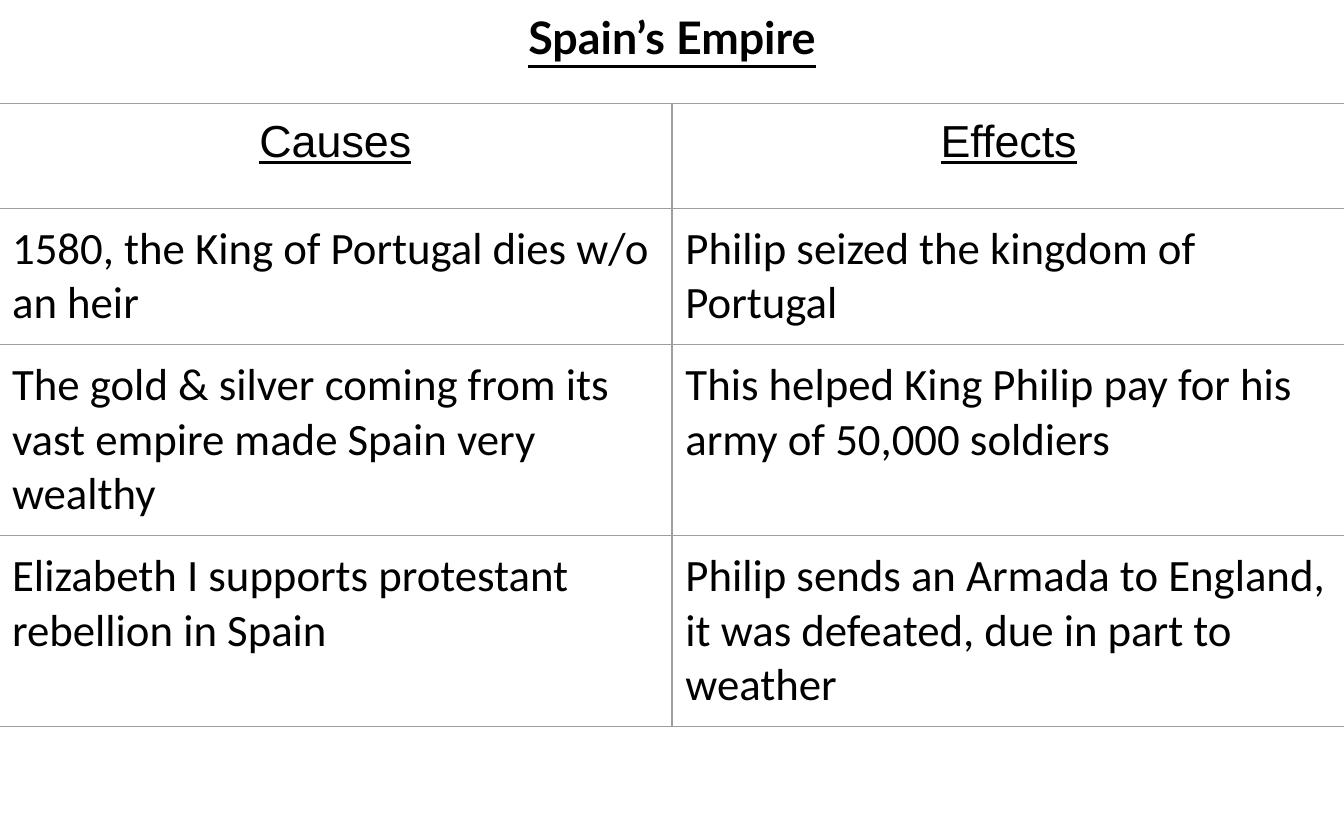
from dataclasses import dataclass

from lxml.etree import SubElement
from pptx import Presentation
from pptx.dml.color import RGBColor as RGB
from pptx.enum.text import MSO_ANCHOR as Anchor, PP_ALIGN as Align
from pptx.oxml.ns import qn
from pptx.util import Inches, Pt


@dataclass(frozen=True)
class Theme:
    ink: str = "000000"
    rule: str = "9E9E9E"
    size: int = 24
    title: str = "Lato"
    head: str = "Arial"
    body: str = "Calibri"
    gap: int = 6
    line: float = 0.75


THEME = Theme()
ROWS = [
    ("Causes", "Effects"),
    ("1580, the King of Portugal dies w/o an heir",
     "Philip seized the kingdom of Portugal"),
    ("The gold & silver coming from its vast empire made Spain very wealthy",
     "This helped King Philip pay for his army of 50,000 soldiers"),
    ("Elizabeth I supports protestant rebellion in Spain",
     "Philip sends an Armada to England, it was defeated, due in part to weather"),
]
HEIGHTS = [0.78, 0.92, 1.39, 1.39]
WIDTH = 5.01


def set_text(frame, text, face, bold=False, under=False, align=Align.LEFT):
    frame.text = text
    frame.word_wrap = True
    para = frame.paragraphs[0]
    para.alignment = align
    font = para.runs[0].font
    font.name, font.size = face, Pt(THEME.size)
    font.bold, font.underline = bold, under
    font.color.rgb = RGB.from_string(THEME.ink)
    return para


def set_pad(box):
    box.margin_left = box.margin_right = Inches(0.1)
    box.margin_top = box.margin_bottom = Inches(0.1)


def add_rules(cell):
    # Border lines come before the fill in the cell properties
    props = cell._tc.get_or_add_tcPr()
    for spot, side in enumerate("LRTB"):
        line = SubElement(props, qn(f"a:ln{side}"), w=str(Pt(THEME.line)))
        fill = SubElement(line, qn("a:solidFill"))
        SubElement(fill, qn("a:srgbClr"), val=THEME.rule)
        props.insert(spot, line)


def add_title(slide, text):
    box = slide.shapes.add_textbox(0, 0, Inches(10), Inches(0.55))
    frame = box.text_frame
    set_pad(frame)
    frame.vertical_anchor = Anchor.MIDDLE
    set_text(frame, text, THEME.title, True, True, Align.CENTER)


def add_grid(slide, rows):
    shape = slide.shapes.add_table(
        len(rows), 2, Inches(-0.01), Inches(0.77),
        Inches(2 * WIDTH), Inches(sum(HEIGHTS)))
    table = shape.table
    table.first_row = table.horz_banding = False
    for col in table.columns:
        col.width = Inches(WIDTH)
    for i, texts in enumerate(rows):
        table.rows[i].height = Inches(HEIGHTS[i])
        for j, text in enumerate(texts):
            cell = table.cell(i, j)
            set_pad(cell)
            cell.fill.background()
            add_rules(cell)
            if i == 0:
                set_text(cell.text_frame, text, THEME.head,
                         under=True, align=Align.CENTER)
            else:
                para = set_text(cell.text_frame, text, THEME.body)
                para.space_before = Pt(THEME.gap)


def main():
    deck = Presentation()
    deck.slide_width, deck.slide_height = Inches(10), Inches(6.25)
    slide = deck.slides.add_slide(deck.slide_layouts[6])

    # Causes and effects, then the heading
    add_grid(slide, ROWS)
    add_title(slide, "Spain’s Empire")
    deck.save("out.pptx")


if __name__ == "__main__":
    main()
